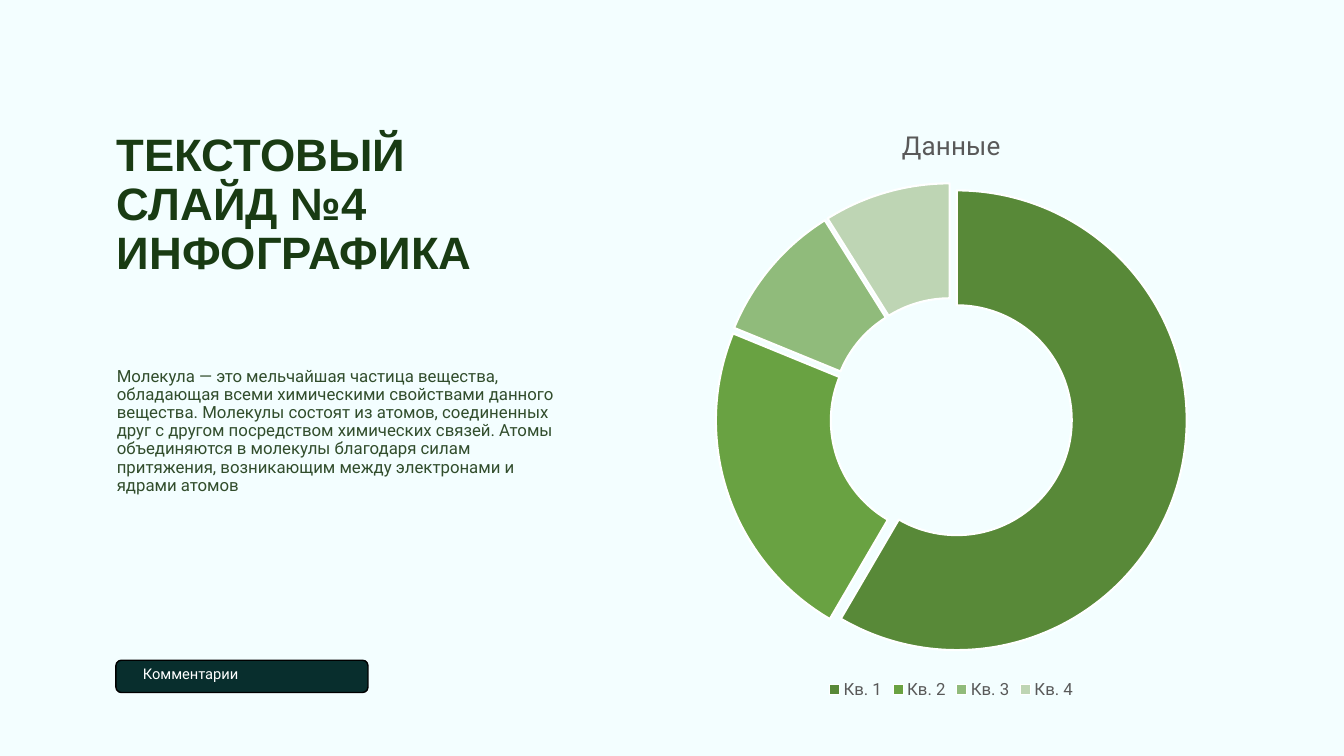
"""Build an infographic slide with a heading, a paragraph, a comment tag and a doughnut chart."""
from pptx import Presentation
from pptx.chart.data import CategoryChartData
from pptx.dml.color import RGBColor
from pptx.enum import chart as ch, shapes, text
from pptx.util import Inches, Pt

HEADING = "ТЕКСТОВЫЙ\vСЛАЙД №4\vИНФОГРАФИКА"
BODY = (
    "Молекула — это мельчайшая частица вещества, обладающая всеми химическими "
    "свойствами данного вещества. Молекулы состоят из атомов, соединенных друг с "
    "другом посредством химических связей. Атомы объединяются в молекулы благодаря "
    "силам притяжения, возникающим между электронами и ядрами атомов"
)
COMMENT = "Комментарии"
CHART_TITLE = "Данные"
QUARTERS = [
    ("Кв. 1", 59, "588938"),
    ("Кв. 2", 23, "69A242"),
    ("Кв. 3", 10, "90BB7B"),
    ("Кв. 4", 9, "BED5B4"),
]
EXPLOSION, HOLE = 5, 75
COLORS = {
    "background": "F3FEFF",
    "heading": "193B13",
    "body": "314D2C",
    "tag": "082E2D",
    "outline": "000000",
    "white": "FFFFFF",
    "chart": "595959",
}
PLACES = {
    "heading": (1.06, 1.32, 5.61, 1.45),
    "body": (1.06, 3.6, 4.55, 2.47),
    "tag": (1.15, 6.55, 2.5, 0.32),
    "comment": (1.32, 6.55, 2.17, 0.29),
    "chart": (5.6, 1.05, 7.67, 5.93),
}


def place(part):
    return [Inches(length) for length in PLACES[part]]


def rgb(color):
    return RGBColor.from_string(COLORS.get(color, color))


def set_font(font, size, color, name="Roboto", bold=False):
    font.size, font.name, font.bold = Pt(size), name, bold
    font.color.rgb = rgb(color)


def write(frame, words, spacing=1.0, anchor=text.MSO_ANCHOR.TOP, **font):
    frame.word_wrap = True
    frame.auto_size = text.MSO_AUTO_SIZE.NONE
    frame.vertical_anchor = anchor
    frame.text = words
    paragraph = frame.paragraphs[0]
    paragraph.alignment = text.PP_ALIGN.LEFT
    paragraph.line_spacing = spacing
    for run in paragraph.runs:
        set_font(run.font, **font)


def add_doughnut(slide):
    data = CategoryChartData()
    data.categories = [quarter for quarter, _, _ in QUARTERS]
    data.add_series(CHART_TITLE, [share for _, share, _ in QUARTERS])
    chart = slide.shapes.add_chart(
        ch.XL_CHART_TYPE.DOUGHNUT_EXPLODED, *place("chart"), data
    ).chart
    set_font(chart.font, 10, "outline", name="Calibri")

    chart.has_title = True
    write(chart.chart_title.text_frame, CHART_TITLE, size=18.6, color="chart")
    chart.has_legend = True
    chart.legend.position = ch.XL_LEGEND_POSITION.BOTTOM
    chart.legend.include_in_layout = False
    set_font(chart.legend.font, 12, "chart")

    plot = chart.plots[0]
    plot.vary_by_categories = True
    for index, (_, _, color) in enumerate(QUARTERS):
        slice_format = plot.series[0].points[index].format
        slice_format.fill.solid()
        slice_format.fill.fore_color.rgb = rgb(color)
        slice_format.line.color.rgb = rgb("white")
        slice_format.line.width = Pt(1.5)
    for tag, value in (("explosion", EXPLOSION), ("holeSize", HOLE)):
        for element in chart.element.xpath(f".//c:{tag}"):
            element.set("val", str(value))


def main():
    deck = Presentation()
    deck.slide_width, deck.slide_height = Inches(13.33), Inches(7.5)
    slide = deck.slides.add_slide(deck.slide_layouts[5])
    slide.background.fill.solid()
    slide.background.fill.fore_color.rgb = rgb("background")

    heading = slide.shapes.title
    heading.left, heading.top, heading.width, heading.height = place("heading")
    write(heading.text_frame, HEADING, spacing=0.9, anchor=text.MSO_ANCHOR.MIDDLE,
          size=32.4, color="heading", name="Arial", bold=True)

    body = slide.shapes.add_textbox(*place("body"))
    write(body.text_frame, BODY, spacing=0.9, size=12, color="body")

    tag = slide.shapes.add_shape(shapes.MSO_SHAPE.ROUNDED_RECTANGLE, *place("tag"))
    tag.shadow.inherit = False
    tag.fill.solid()
    tag.fill.fore_color.rgb = rgb("tag")
    tag.line.color.rgb = rgb("outline")
    tag.line.width = Pt(1)

    comment = slide.shapes.add_textbox(*place("comment"))
    write(comment.text_frame, COMMENT, size=10.5, color="white")

    add_doughnut(slide)
    deck.save("out.pptx")


if __name__ == "__main__":
    main()
